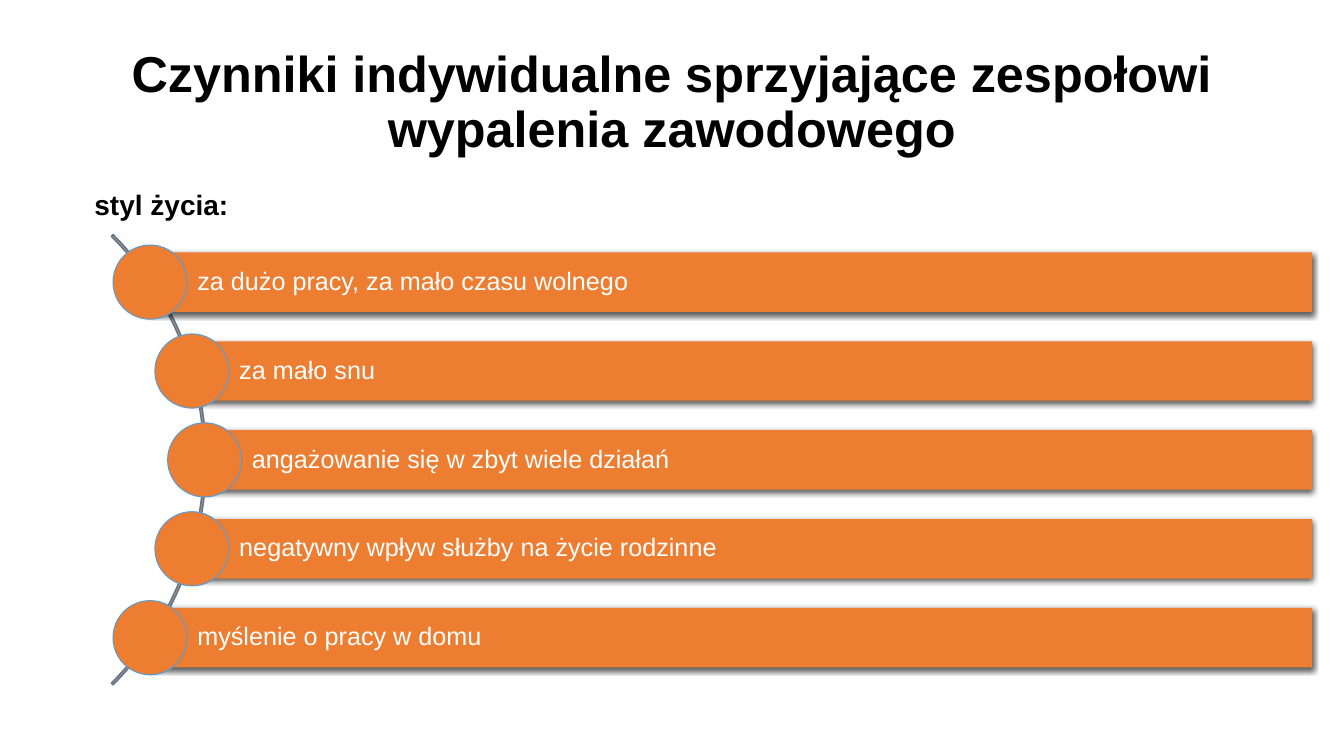
import math
from lxml import etree
from pptx import Presentation
from pptx.dml.color import RGBColor
from pptx.enum.shapes import MSO_SHAPE
from pptx.enum.text import MSO_ANCHOR, PP_ALIGN
from pptx.oxml import parse_xml
from pptx.util import Cm, Pt

ORANGE = RGBColor(0xED, 0x7D, 0x31)
BLUE = RGBColor(0x59, 0x9B, 0xD5)
DARK_BLUE = RGBColor(0x48, 0x7A, 0xA8)
BLACK = RGBColor(0, 0, 0)
WHITE = RGBColor(0xFF, 0xFF, 0xFF)
FONT = "Arial"
MIDDLE, TOP = MSO_ANCHOR.MIDDLE, MSO_ANCHOR.TOP
LEFT, CENTER = PP_ALIGN.LEFT, PP_ALIGN.CENTER
RECT, OVAL, ARC = MSO_SHAPE.RECTANGLE, MSO_SHAPE.OVAL, MSO_SHAPE.BLOCK_ARC

SHADOW = """<a:effectLst xmlns:a="http://schemas.openxmlformats.org/drawingml/2006/main">
<a:outerShdw blurRad="57150" dist="19050" dir="5400000" algn="ctr" rotWithShape="0">
<a:srgbClr val="000000"><a:alpha val="63000"/></a:srgbClr></a:outerShdw></a:effectLst>"""

HABITS = [
    "za dużo pracy, za mało czasu wolnego",
    "za mało snu",
    "angażowanie się w zbyt wiele działań",
    "negatywny wpływ służby na życie rodzinne",
    "myślenie o pracy w domu",
]


def add_shape(kind, x, y, w, h, line=None, width=1):
    shape = s.shapes.add_shape(kind, Cm(x), Cm(y), Cm(w), Cm(h))
    shape.shadow.inherit = False
    shape.fill.solid()
    shape.fill.fore_color.rgb = ORANGE
    if line is None:
        shape.line.fill.background()
    else:
        shape.line.color.rgb = line
        shape.line.width = Pt(width)
    return shape


def write(shape, text, size, color, bold, align, anchor, spacing):
    tf = shape.text_frame
    tf.word_wrap = True
    tf.vertical_anchor = anchor
    tf.text = text
    p = tf.paragraphs[0]
    p.alignment = align
    p.line_spacing = spacing
    font = p.runs[0].font
    font.name, font.size, font.bold = FONT, Pt(size), bold
    font.color.rgb = color


prs = Presentation()
prs.slide_width, prs.slide_height = Cm(33.87), Cm(19.05)
s = prs.slides.add_slide(prs.slide_layouts[5])

# Title
title = s.shapes.title
title.left, title.top, title.width, title.height = Cm(2.33), Cm(0.89), Cm(29.21), Cm(3.45)
write(title, "Czynniki indywidualne sprzyjające zespołowi wypalenia zawodowego",
      36, BLACK, True, CENTER, MIDDLE, 0.9)

# Arc behind the list
arc = add_shape(ARC, -10.85, 3.56, 16.05, 16.05, DARK_BLUE)
for i, value in enumerate((189, 27, 0.004)):
    arc.adjustments[i] = value

# Bars with circles whose centres follow the arc
CENTER_X, CENTER_Y, RADIUS = -2.82, 11.59, 7.98
PITCH, BAR_H, CIRCLE, RIGHT = 2.24, 1.5, 1.87, 33.07
for i, habit in enumerate(HABITS):
    dy = (i - 2) * PITCH
    x = CENTER_X + math.sqrt(RADIUS ** 2 - dy ** 2)
    y = CENTER_Y + dy
    bar = add_shape(RECT, x, y - BAR_H / 2, RIGHT - x, BAR_H)
    bar.shadow.inherit = True
    bar._element.spPr.append(parse_xml(SHADOW))
    write(bar, habit, 18, WHITE, False, LEFT, MIDDLE, 0.9)
    tf = bar.text_frame
    tf.margin_left = Cm(1.19)
    tf.margin_top = tf.margin_right = tf.margin_bottom = Cm(0.2)
    add_shape(OVAL, x - CIRCLE / 2, y - CIRCLE / 2, CIRCLE, CIRCLE, BLUE, 0.75)

# List heading
heading = s.shapes.add_textbox(Cm(2.13), Cm(4.6), Cm(25.63), Cm(1.45))
write(heading, "styl życia:", 20, BLACK, True, LEFT, TOP, 1)

prs.save("out.pptx")
